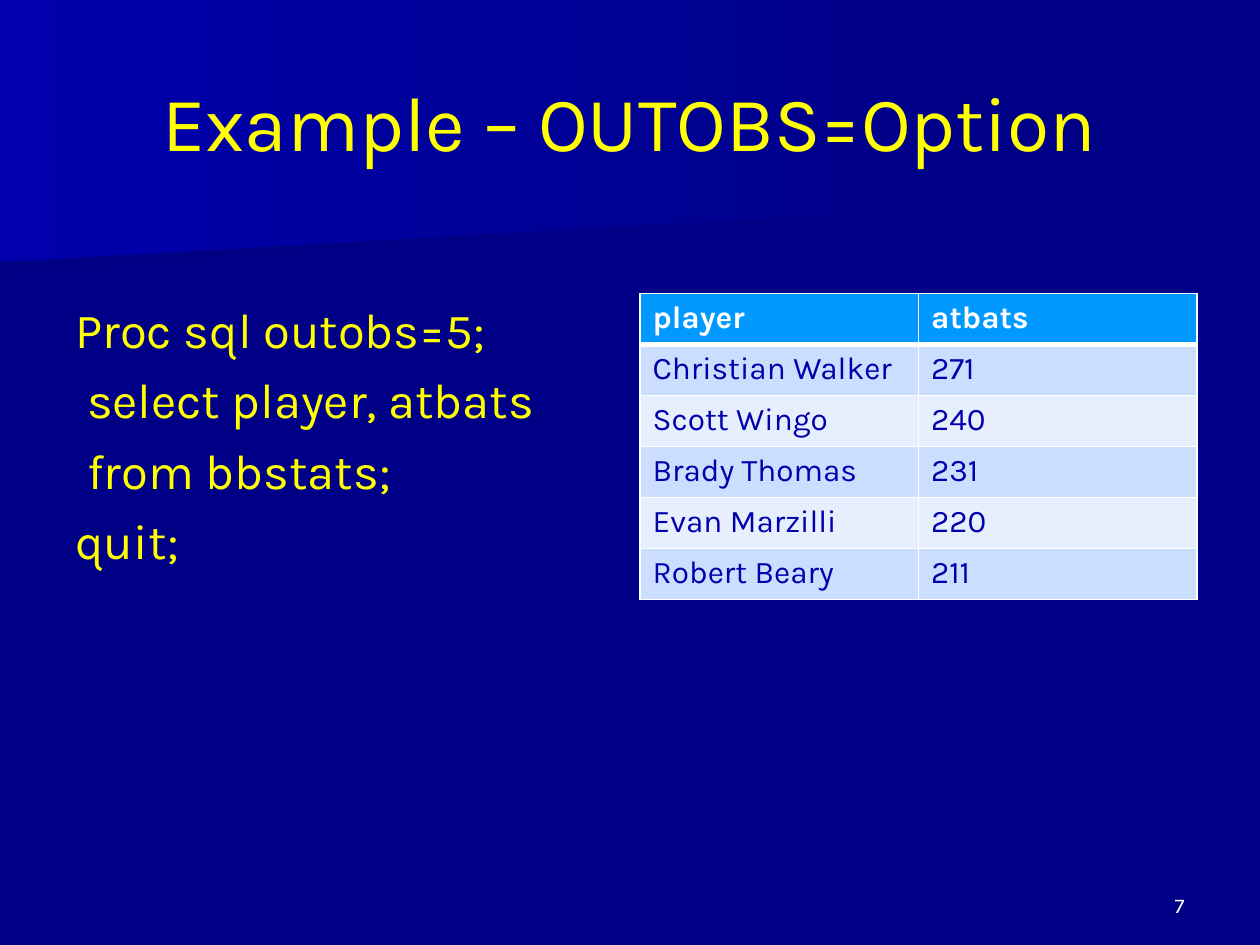
from pptx import Presentation, util as u
from pptx.dml import color
from pptx.enum import text
from pptx.oxml import ns, xmlchemy

FONT = "Karla"
NAVY, BLUE, YELLOW, WHITE = "000086", "0000AC", "FFFF00", "FFFFFF"
HEADER, ROW_FILLS = "0099FF", ("CBDEFF", "E7EFFF")
CODE = ["Proc sql outobs=5;", " select player, atbats", " from bbstats;", "quit;"]
ROWS = [
    ("player", "atbats"),
    ("Christian Walker", "271"),
    ("Scott Wingo", "240"),
    ("Brady Thomas", "231"),
    ("Evan Marzilli", "220"),
    ("Robert Beary", "211"),
]


def rgb(value):
    """Turn a hex string into a colour."""
    return color.RGBColor.from_string(value)


def apply(target, **values):
    """Set each named attribute of the target."""
    for name, value in values.items():
        setattr(target, name, value)


def inches(*lengths):
    """Turn numbers into lengths in inches."""
    return [u.Inches(length) for length in lengths]


def write(frame, lines, size, hue, gap=0, bold=False, align=text.PP_ALIGN.LEFT):
    """Write one paragraph for each line, with a gap between them."""
    for index, line in enumerate(lines):
        para = frame.paragraphs[0] if index == 0 else frame.add_paragraph()
        apply(para, alignment=align, space_before=u.Pt(gap if index else 0))
        span = para.add_run()
        span.text = line
        apply(span.font, name=FONT, size=u.Pt(size), bold=bold)
        span.font.color.rgb = rgb(hue)


def add_band(page, points, start):
    """Draw a backdrop band that fades from the start colour to navy."""
    corners = [inches(*point) for point in points]
    builder = page.shapes.build_freeform(*corners[0], scale=1.0)
    builder.add_line_segments(corners[1:], close=True)
    band = builder.convert_to_shape()
    band.shadow.inherit = False
    band.line.fill.background()
    band.fill.gradient()
    band.fill.gradient_angle = 0
    for stop, hue in zip(band.fill.gradient_stops, (start, NAVY)):
        stop.color.rgb = rgb(hue)


def add_backdrop(page):
    """Fill the background and lay the two bands over it."""
    page.background.fill.solid()
    page.background.fill.fore_color.rgb = rgb(NAVY)
    add_band(page, [(0, 1.01), (7.79, 1.01), (7.78, 1.53), (0, 2.17)], "000083")
    add_band(page, [(0, 0), (7.92, 0), (7.92, 1.62), (0, 2.08)], BLUE)


def place_title(page, left, top, width, height):
    """Place the title in front of the backdrop."""
    title = page.shapes.title
    title.element.getparent().append(title.element)
    for name, value in zip(("left", "top", "width", "height"), inches(left, top, width, height)):
        setattr(title, name, value)
    title.text_frame.vertical_anchor = text.MSO_ANCHOR.MIDDLE
    write(title.text_frame, ["Example – OUTOBS=Option"], 44, YELLOW, align=text.PP_ALIGN.CENTER)


def add_text(page, left, top, width, height, lines, anchor=text.MSO_ANCHOR.TOP, **style):
    """Add a wrapped text box."""
    box = page.shapes.add_textbox(*inches(left, top, width, height))
    apply(box.text_frame, word_wrap=True, vertical_anchor=anchor)
    write(box.text_frame, lines, **style)


def set_borders(cell, top, bottom):
    """Give a cell white borders, with top and bottom widths in points."""
    props = cell._tc.get_or_add_tcPr()
    for side, width in {"L": 1, "R": 1, "T": top, "B": bottom}.items():
        line = xmlchemy.OxmlElement(f"a:ln{side}")
        line.set("w", str(u.Pt(width)))
        fill = xmlchemy.OxmlElement("a:solidFill")
        hue = xmlchemy.OxmlElement("a:srgbClr")
        hue.set("val", WHITE)
        fill.append(hue)
        line.append(fill)
        props.append(line)


def add_stats(page, left, top, width, height):
    """Add the banded table of players."""
    frame = page.shapes.add_table(len(ROWS), len(ROWS[0]), *inches(left, top, width, height))
    for row, values in enumerate(ROWS):
        header = row == 0
        for column, value in enumerate(values):
            cell = frame.table.cell(row, column)
            set_borders(cell, 3 if row == 1 else 1, 3 if header else 1)
            cell.fill.solid()
            cell.fill.fore_color.rgb = rgb(HEADER if header else ROW_FILLS[(row - 1) % 2])
            write(cell.text_frame, [value], 18, WHITE if header else BLUE, bold=header)


def main():
    """Build the slide and save it."""
    deck = Presentation()
    apply(deck, slide_width=u.Inches(10), slide_height=u.Inches(7.5))
    page = deck.slides.add_slide(deck.slide_layouts[5])
    add_backdrop(page)
    place_title(page, 0.5, 0.33, 9, 1.25)
    add_text(page, 0.5, 2.33, 4.42, 4.34, CODE, size=28, hue=YELLOW, gap=6.5)
    add_stats(page, 5.08, 2.33, 4.42, 2.43)
    add_text(page, 7.17, 6.83, 2.33, 0.5, ["7"], text.MSO_ANCHOR.BOTTOM,
             size=12, hue=WHITE, align=text.PP_ALIGN.RIGHT)
    deck.save("out.pptx")


if __name__ == "__main__":
    main()
